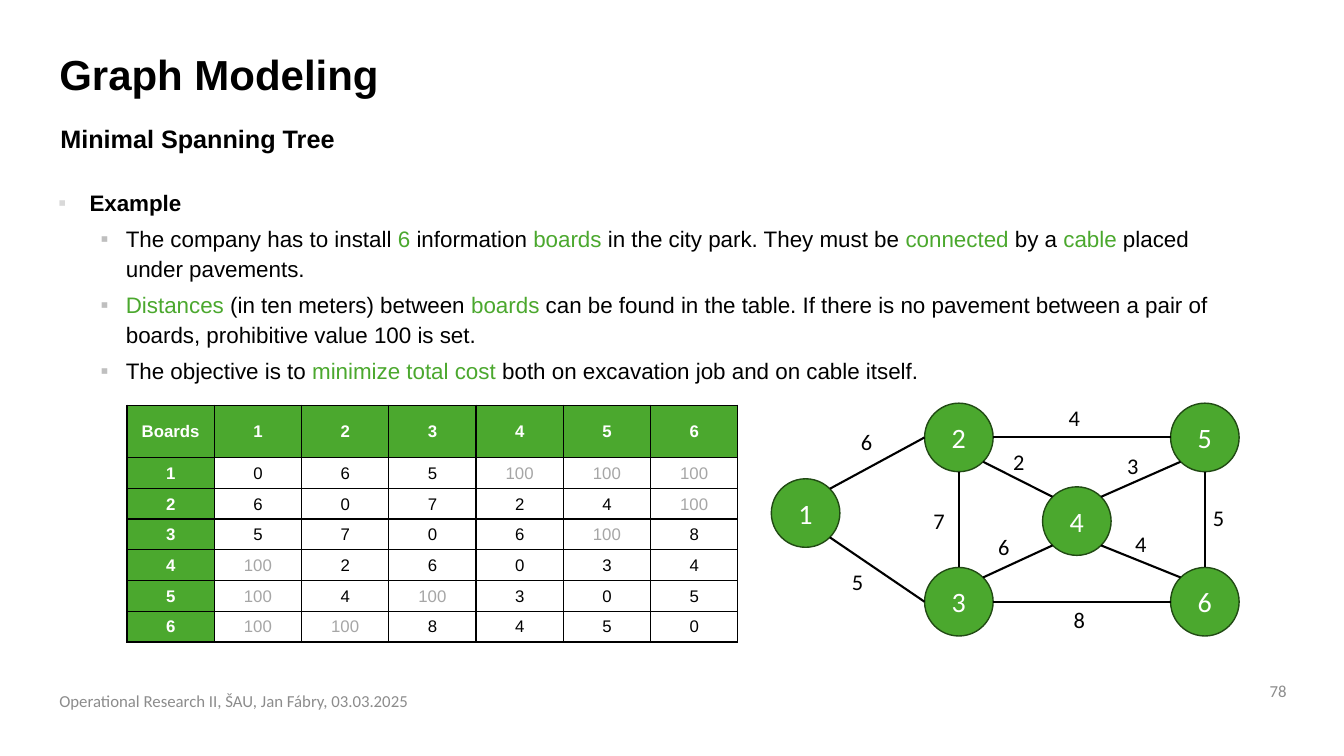
from lxml.etree import SubElement
from pptx import Presentation
from pptx.dml.color import RGBColor
from pptx.enum.shapes import MSO_CONNECTOR, MSO_SHAPE
from pptx.enum.text import MSO_ANCHOR, PP_ALIGN
from pptx.oxml import parse_xml
from pptx.oxml.ns import nsdecls, qn
from pptx.util import Inches, Pt

GREEN, BLACK, WHITE, GRAY = "4BA82E", "000000", "FFFFFF", "8C8C8C"


def style(font, size, color, name="Arial", bold=False):
    font.size, font.name, font.bold = Pt(size), name, bold
    font.color.rgb = RGBColor.from_string(color)


def add_text(left, top, width, height, text, size, color, name="Arial",
             bold=False, wrap=True, anchor=MSO_ANCHOR.TOP):
    box = slide.shapes.add_textbox(Inches(left), Inches(top), Inches(width), Inches(height))
    frame = box.text_frame
    frame.word_wrap, frame.vertical_anchor = wrap, anchor
    frame.text = text
    style(frame.paragraphs[0].runs[0].font, size, color, name, bold)
    return frame.paragraphs[0]


deck = Presentation()
deck.slide_width, deck.slide_height = Inches(13.33), Inches(7.5)
slide = deck.slides.add_slide(deck.slide_layouts[6])

# Headings, footer and slide number
title = add_text(0.49, 0.49, 10.13, 0.57, "Graph Modeling", 30, BLACK, bold=True)
title.line_spacing = 0.9
add_text(0.5, 1.17, 10.45, 0.4, "Minimal Spanning Tree", 18, BLACK, bold=True)
add_text(0.49, 6.75, 7.17, 0.4, "Operational Research II, ŠAU, Jan Fábry, 03.03.2025",
         12, GRAY, "Calibri", anchor=MSO_ANCHOR.MIDDLE)
number = add_text(12.26, 6.69, 0.6, 0.33, "78", 12, GRAY, "Calibri",
                  anchor=MSO_ANCHOR.MIDDLE)
number.alignment = PP_ALIGN.RIGHT

# Example text: green words stand between asterisks
tasks = [
    "The company has to install *6* information *boards* in the city park. "
    "They must be *connected* by a *cable *placed under pavements.",
    "*Distances* (in ten meters) between *boards* can be found in the table. "
    "If there is no pavement between a pair of boards, prohibitive value 100 is set.",
    "The objective is to *minimize total cost* both on excavation job and on cable itself.",
]
add_text(0.48, 1.8, 11.83, 4.13, "Example", 16, BLACK, bold=True)
frame = slide.shapes[-1].text_frame
for task in tasks:
    para = frame.add_paragraph()
    para.level = 1
    para.space_before = Pt(5)
    for index, piece in enumerate(task.split("*")):
        if piece:
            span = para.add_run()
            span.text = piece
            style(span.font, 16, GREEN if index % 2 else BLACK)
for para in frame.paragraphs:
    para.line_spacing = 1.1
    margin, indent, color = (0.67, -0.25, "BFBFBF") if para.level else (0.31, -0.31, "D9D9D9")
    properties = para._p.get_or_add_pPr()
    properties.set("marL", str(Inches(margin)))
    properties.set("indent", str(Inches(indent)))
    bullet_color = SubElement(properties, qn("a:buClr"))
    SubElement(bullet_color, qn("a:srgbClr"), val=color)
    SubElement(properties, qn("a:buFont"), typeface="Arial")
    SubElement(properties, qn("a:buChar"), char="▪")

# Distance table
distances = [
    [0, 6, 5, 100, 100, 100],
    [6, 0, 7, 2, 4, 100],
    [5, 7, 0, 6, 100, 8],
    [100, 2, 6, 0, 3, 4],
    [100, 4, 100, 3, 0, 5],
    [100, 100, 8, 4, 5, 0],
]
rows = [["Boards", *range(1, 7)]]
rows += [[board, *values] for board, values in enumerate(distances, 1)]
table = slide.shapes.add_table(7, 7, Inches(1.26), Inches(4.02),
                               Inches(6.06), Inches(2.35)).table
for column in table.columns:
    column.width = Inches(6.06 / 7)
for r, values in enumerate(rows):
    table.rows[r].height = Inches((2.35 - 0.52) / 6 if r else 0.52)
    for c, value in enumerate(values):
        cell = table.cell(r, c)
        header = r == 0 or c == 0
        cell.text_frame.text = str(value)
        cell.vertical_anchor = MSO_ANCHOR.MIDDLE
        cell.margin_left = cell.margin_right = cell.margin_top = Inches(0.01)
        cell.margin_bottom = 0
        cell.fill.solid()
        cell.fill.fore_color.rgb = RGBColor.from_string(GREEN if header else WHITE)
        para = cell.text_frame.paragraphs[0]
        para.alignment = PP_ALIGN.CENTER
        color = WHITE if header else "A6A6A6" if value == 100 else BLACK
        style(para.runs[0].font, 12, color, bold=header)
        for position, side in enumerate(("lnL", "lnR", "lnT", "lnB")):
            cell._tc.get_or_add_tcPr().insert(position, parse_xml(
                f'<a:{side} {nsdecls("a")} w="{Pt(1)}"><a:solidFill>'
                f'<a:srgbClr val="{BLACK}"/></a:solidFill></a:{side}>'))

# Graph nodes, by centre
radius = 0.34
nodes = {1: (7.99, 5.09), 2: (9.51, 4.34), 3: (9.51, 5.97),
         4: (10.68, 5.17), 5: (11.95, 4.34), 6: (11.95, 5.97)}
for node, (x, y) in nodes.items():
    circle = slide.shapes.add_shape(MSO_SHAPE.OVAL, Inches(x - radius), Inches(y - radius),
                                    Inches(2 * radius), Inches(2 * radius))
    circle.shadow.inherit = False
    circle.fill.solid()
    circle.fill.fore_color.rgb = RGBColor.from_string(GREEN)
    circle.line.color.rgb = RGBColor.from_string("214A14")
    circle.line.width = Pt(1)
    circle.text_frame.text = str(node)
    circle.text_frame.vertical_anchor = MSO_ANCHOR.MIDDLE
    para = circle.text_frame.paragraphs[0]
    para.alignment = PP_ALIGN.CENTER
    style(para.runs[0].font, 20, WHITE, "Calibri")

# Graph edges: node and side at each end, then the place of the length label
sides = {"N": (0, -1), "S": (0, 1), "W": (-1, 0), "E": (1, 0),
         "NW": (-0.71, -0.71), "NE": (0.71, -0.71), "SW": (-0.71, 0.71), "SE": (0.71, 0.71)}
edges = [
    (1, "NE", 2, "W", 8.44, 4.2),
    (1, "SE", 3, "W", 8.35, 5.59),
    (2, "E", 5, "W", 10.5, 3.96),
    (2, "SE", 4, "NW", 9.95, 4.4),
    (2, "S", 3, "N", 9.16, 4.98),
    (5, "S", 6, "N", 11.93, 4.95),
    (3, "E", 6, "W", 10.55, 5.96),
    (3, "NE", 4, "SW", 9.8, 5.24),
    (4, "SE", 6, "NW", 11.16, 5.21),
    (4, "NE", 5, "SW", 11.08, 4.44),
]
for start, start_side, end, end_side, label_left, label_top in edges:
    points = [Inches(centre + radius * step)
              for node, side in ((start, start_side), (end, end_side))
              for centre, step in zip(nodes[node], sides[side])]
    edge = slide.shapes.add_connector(MSO_CONNECTOR.STRAIGHT, *points)
    edge.line.color.rgb = RGBColor.from_string(BLACK)
    edge.line.width = Pt(1.5)
    SubElement(edge._element.spPr, qn("a:effectLst"))
    add_text(label_left, label_top, 0.32, 0.37, str(distances[start - 1][end - 1]),
             16, BLACK, "Calibri", wrap=False)

deck.save("out.pptx")
